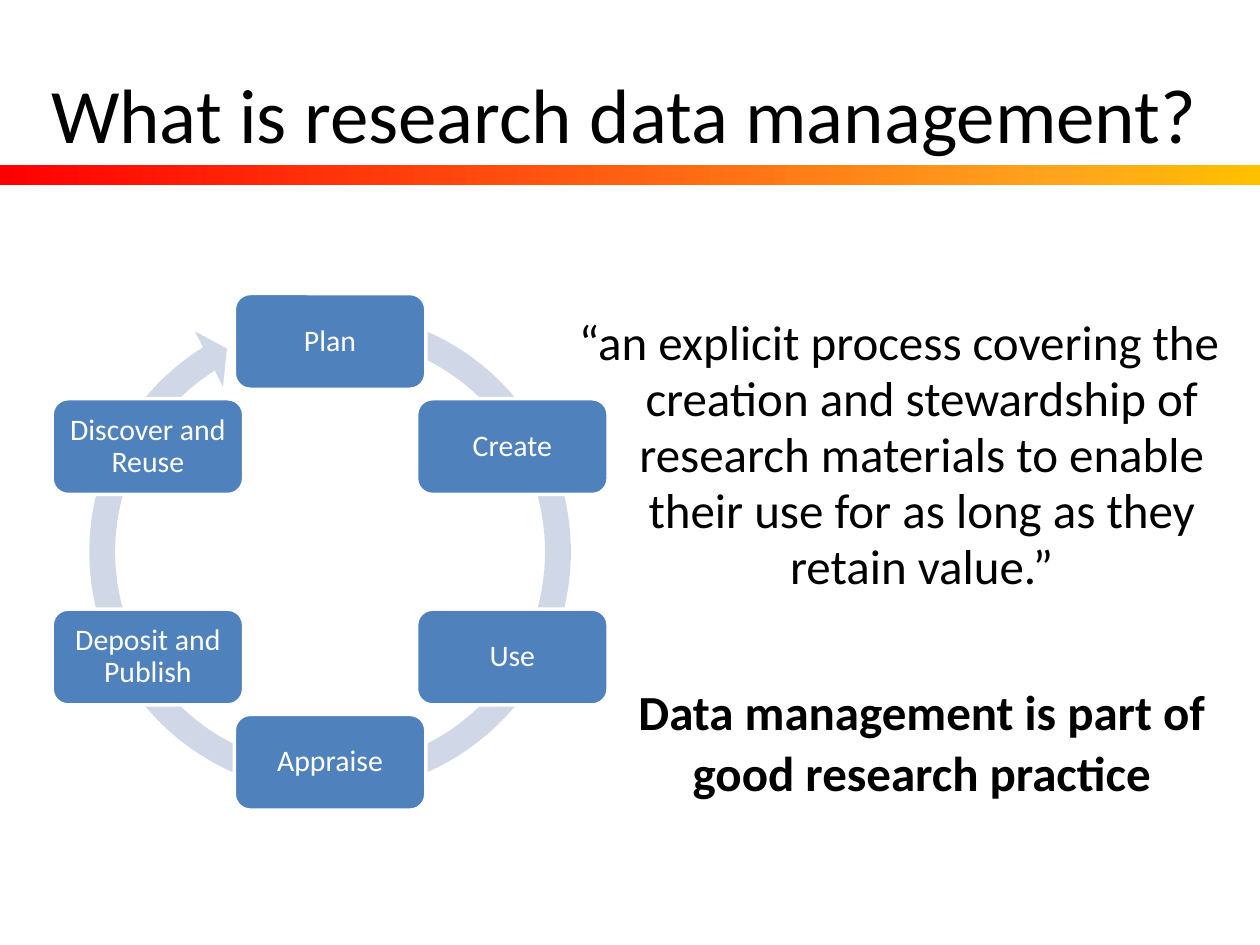
import math
from copy import deepcopy
from dataclasses import dataclass
from typing import Any

from pptx import Presentation
from pptx import util as u
from pptx.dml.color import RGBColor
from pptx.enum import shapes, text
from pptx.oxml.ns import qn

COLUMNS, ROWS = 100, 75


@dataclass(frozen=True)
class Theme:
    font: str = "Calibri"
    ink: str = "000000"
    paper: str = "FFFFFF"
    node: str = "4F81BD"
    ring: str = "D0D8E8"
    band: tuple = ((0, "FF0000"), (0.84, "FFA41D"), (1, "FFC000"))
    title_size: float = 44
    body_size: float = 28
    node_size: float = 17


@dataclass(frozen=True)
class Area:
    column: float
    row: float
    columns: float
    rows: float


@dataclass(frozen=True)
class Line:
    words: str
    size: float
    color: str
    spacing: float
    before: float = 0
    bold: bool = False
    margin: float = 0
    indent: float = 0


THEME = Theme()
deck = Presentation()
deck.slide_width, deck.slide_height = u.Inches(10), u.Inches(7.5)
page = deck.slides.add_slide(deck.slide_layouts[6])


def place(area: Area) -> list[int]:
    across, down = deck.slide_width / COLUMNS, deck.slide_height / ROWS
    return [round(area.column * across), round(area.row * down),
            round(area.columns * across), round(area.rows * down)]


def apply(target: Any, values: dict[str, Any]) -> None:
    for name, value in values.items():
        setattr(target, name, value)


def write(box: Any, lines: list[Line], **frame_values: Any) -> None:
    frame = box.text_frame
    apply(frame, {"word_wrap": True, **frame_values})
    for index, line in enumerate(lines):
        para = frame.paragraphs[0] if index == 0 else frame.add_paragraph()
        properties = para._p.get_or_add_pPr()
        properties.set("marL", str(u.Inches(line.margin)))
        properties.set("indent", str(u.Inches(line.indent)))
        apply(para, {"alignment": text.PP_ALIGN.CENTER,
                     "line_spacing": line.spacing,
                     "space_before": u.Pt(line.before)})
        span = para.add_run()
        span.text = line.words
        apply(span.font, {"name": THEME.font, "size": u.Pt(line.size), "bold": line.bold})
        span.font.color.rgb = RGBColor.from_string(line.color)


def add_text(area: Area, lines: list[Line]) -> None:
    write(page.shapes.add_textbox(*place(area)), lines,
          vertical_anchor=text.MSO_ANCHOR.TOP)


def add_solid(kind: shapes.MSO_SHAPE, area: Area, color: str) -> Any:
    shape = page.shapes.add_shape(kind, *place(area))
    shape.shadow.inherit = False
    shape.fill.solid()
    shape.fill.fore_color.rgb = RGBColor.from_string(color)
    shape.line.fill.background()
    return shape


def add_band(area: Area) -> None:
    band = add_solid(shapes.MSO_SHAPE.RECTANGLE, area, THEME.band[0][1])
    band.fill.gradient()
    band.fill.gradient_angle = 0
    stop_list = band._element.spPr.find(qn("a:gradFill")).find(qn("a:gsLst"))
    stop_list.append(deepcopy(stop_list[-1]))
    for stop, (position, color) in zip(band.fill.gradient_stops, THEME.band):
        stop.position = position
        stop.color.rgb = RGBColor.from_string(color)


def add_cycle(steps: list[str], column: float, row: float, radius: float) -> None:
    size, wide, high = 41.1, 15.2, 7.6
    ring = add_solid(shapes.MSO_SHAPE.CIRCULAR_ARROW,
                     Area(column - size / 2, row - size / 2, size, size), THEME.ring)
    for index, value in enumerate((0.05, 3.13, 142.72, 171.01, 0.06)):
        ring.adjustments[index] = value
    inset = u.Inches(0.07)
    for index, step in enumerate(steps):
        angle = math.tau * index / len(steps)
        center_column = column + radius * math.sin(angle)
        center_row = row - radius * math.cos(angle)
        node = add_solid(shapes.MSO_SHAPE.ROUNDED_RECTANGLE,
                         Area(center_column - wide / 2, center_row - high / 2, wide, high),
                         THEME.node)
        node.line.color.rgb = RGBColor.from_string(THEME.paper)
        node.line.width = u.Pt(2)
        write(node, [Line(step, THEME.node_size, THEME.paper, 0.9)],
              vertical_anchor=text.MSO_ANCHOR.MIDDLE, margin_left=inset,
              margin_right=inset, margin_top=inset, margin_bottom=inset)


def main() -> None:
    add_band(Area(0, 13.1, COLUMNS, 1.6))
    body = {"size": THEME.body_size, "color": THEME.ink, "spacing": 0.95, "margin": 0.36}
    add_text(Area(44.7, 24.6, 53.3, 40.2), [
        Line("“an explicit process covering the creation and stewardship of research "
             "materials to enable their use for as long as they retain value.”",
             indent=-0.36, **body),
        Line("Data management is part of", before=51.5, bold=True, **body),
        Line("good research practice", before=3, bold=True, **body),
    ])
    add_text(Area(1, 5.9, 97.1, 9.4), [
        Line("What is research data management?", THEME.title_size, THEME.ink, 0.85)])
    add_cycle(["Plan", "Create", "Use", "Appraise", "Deposit and Publish",
               "Discover and Reuse"], column=26.2, row=43.8, radius=16.7)
    deck.save("out.pptx")


if __name__ == "__main__":
    main()
